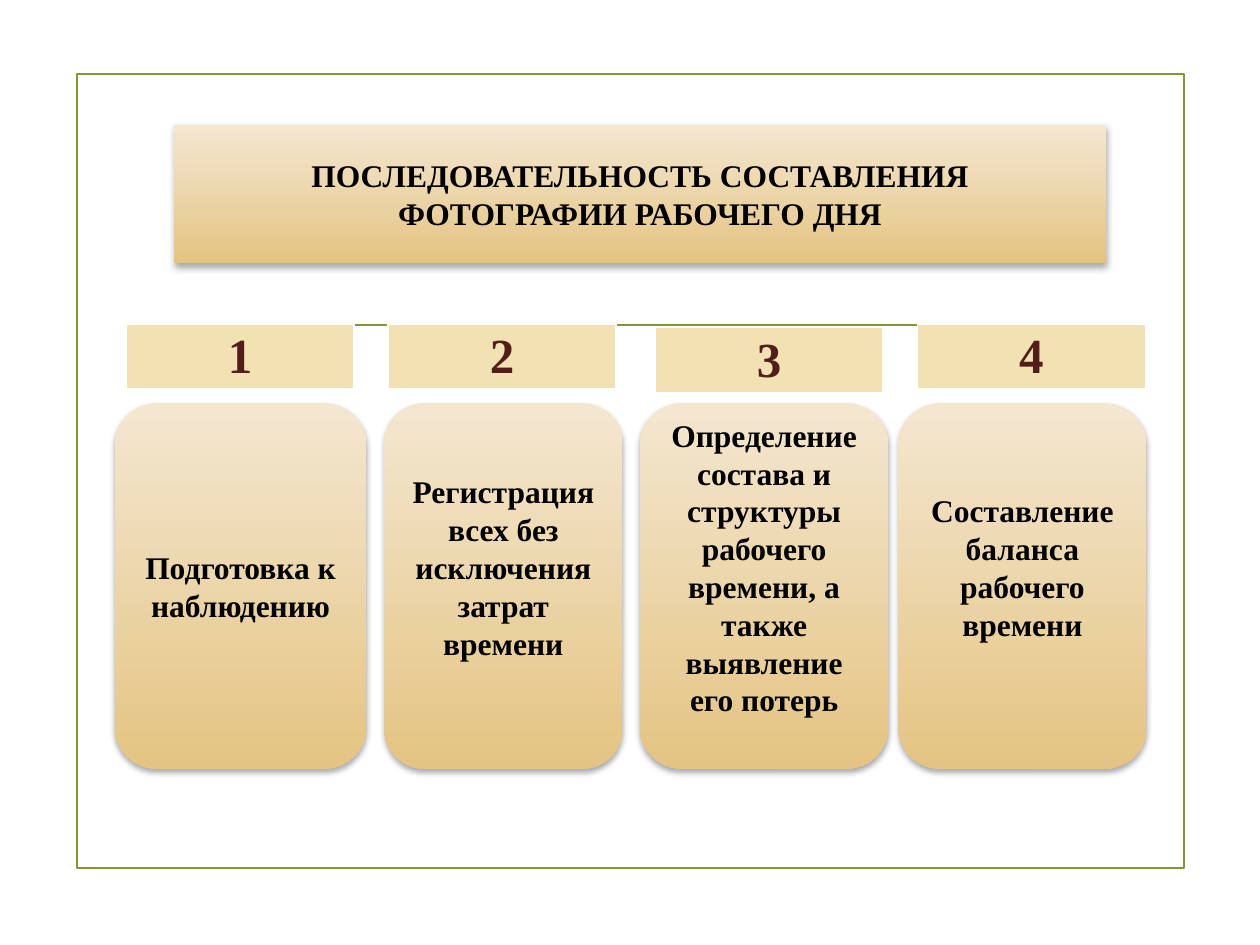
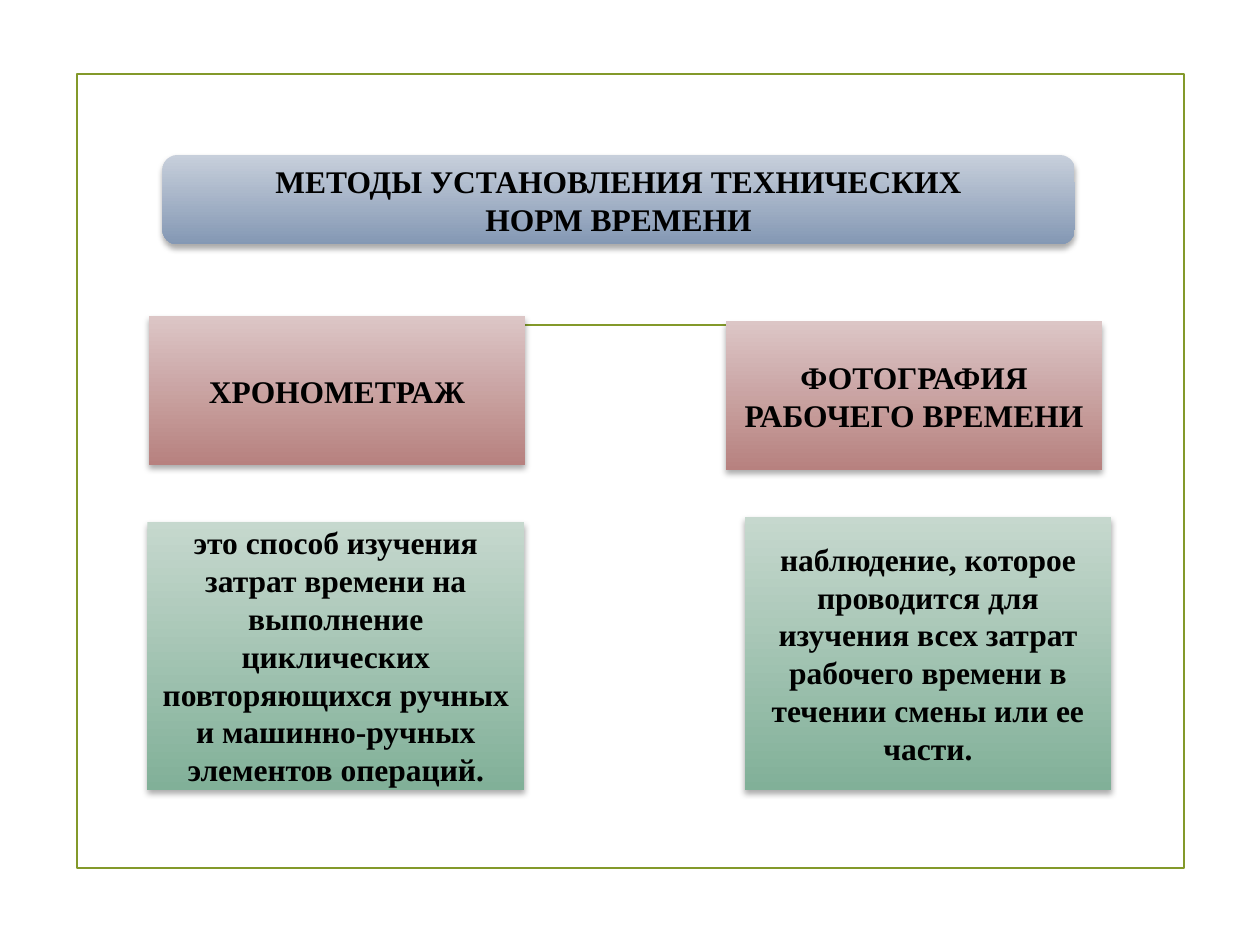
from dataclasses import dataclass
from lxml import etree
from pptx import Presentation
from pptx.dml.color import RGBColor as Rgb
from pptx.enum.shapes import MSO_CONNECTOR as Link, MSO_SHAPE as Kind
from pptx.enum.text import MSO_ANCHOR as Anchor, PP_ALIGN as Align
from pptx.oxml.ns import qn
from pptx.util import Inches, Pt


@dataclass(frozen=True)
class Theme:
    font: str = "Times New Roman"
    body: int = 18
    number: int = 28
    ink: str = "000000"
    maroon: str = "511E19"
    olive: str = "83992A"
    cream: str = "F2E1B3"
    white: str = "FFFFFF"
    gold: tuple = ("F4E7D1", "E4C482")
    blue: tuple = ("C7CFDB", "8498B4")
    rose: tuple = ("DCC6C6", "B7817F")
    green: tuple = ("C6D8CE", "81B098")


def node(parent, tag, **attrs):
    return etree.SubElement(parent, qn(tag), {k: str(v) for k, v in attrs.items()})


class Deck:
    def __init__(self, theme):
        self.theme = theme
        self.prs = Presentation()
        self.prs.slide_width, self.prs.slide_height = Inches(10), Inches(7.5)
        self.slide = None

    def page(self):
        """Start a slide with the shared frame and rule."""
        self.slide = self.prs.slides.add_slide(self.prs.slide_layouts[6])
        frame = self.slide.shapes.add_shape(
            Kind.RECTANGLE, Inches(0.61), Inches(0.59), Inches(8.79), Inches(6.3))
        frame.shadow.inherit = False
        frame.fill.background()
        rule = self.slide.shapes.add_connector(
            Link.STRAIGHT, Inches(1.4), Inches(2.58), Inches(8.61), Inches(2.58))
        for item in (frame, rule):
            item.line.color.rgb = Rgb.from_string(self.theme.olive)
            item.line.width = Pt(1.25)
        node(rule._element.spPr, "a:effectLst")

    def label(self, frame, text, size, color):
        frame.text = text
        for para in frame.paragraphs:
            para.alignment = Align.CENTER
            for run in para.runs:
                font = run.font
                font.name, font.size, font.bold = self.theme.font, Pt(size), True
                font.color.rgb = Rgb.from_string(color)

    def panel(self, text, box, tones, kind=Kind.RECTANGLE, lift=0):
        """Add a shaded box; lift is extra room kept free below the text."""
        shape = self.slide.shapes.add_shape(kind, *map(Inches, box))
        shape.line.fill.background()
        shape.fill.gradient()
        shape.fill.gradient_angle = 270
        for stop, tone in zip(shape.fill.gradient_stops, tones):
            stop.color.rgb = Rgb.from_string(tone)
        self.shade(shape)
        frame = shape.text_frame
        frame.word_wrap = True
        frame.vertical_anchor = Anchor.MIDDLE
        frame.margin_bottom = Inches(0.05 + lift)
        self.label(frame, text, self.theme.body, self.theme.ink)

    def shade(self, shape):
        shape.shadow.inherit = False
        effects = shape._element.spPr.find(qn("a:effectLst"))
        outer = node(effects, "a:outerShdw", blurRad=Pt(3.5), dist=Pt(2.2),
                     dir=90 * 60000, algn="t", rotWithShape=0)
        node(node(outer, "a:srgbClr", val="000000"), "a:alpha", val=32000)

    def badge(self, text, left, top):
        """Add a one-cell table holding a step number."""
        table = self.slide.shapes.add_table(
            1, 1, Inches(left), Inches(top), Inches(1.81), Inches(0.47)).table
        table.first_row = table.horz_banding = False
        cell = table.cell(0, 0)
        self.label(cell.text_frame, text, self.theme.number, self.theme.maroon)
        props = cell._tc.get_or_add_tcPr()
        for side, width in zip("LRTB", (1, 1, 1, 3)):
            edge = node(props, f"a:ln{side}", w=Pt(width))
            node(node(edge, "a:solidFill"), "a:srgbClr", val=self.theme.white)
        cell.fill.solid()
        cell.fill.fore_color.rgb = Rgb.from_string(self.theme.cream)


def steps(deck):
    theme = deck.theme
    deck.page()
    deck.panel("ПОСЛЕДОВАТЕЛЬНОСТЬ СОСТАВЛЕНИЯ\nФОТОГРАФИИ РАБОЧЕГО ДНЯ",
               (1.38, 0.99, 7.4, 1.1), theme.gold)
    # Card text, left, width and lift, then badge left and top
    cards = (
        ("Подготовка к наблюдению", 0.91, 2, 0, 1, 2.57),
        ("Регистрация всех без исключения затрат времени",
         3.05, 1.89, 0.3, 3.08, 2.57),
        ("Определение состава и структуры рабочего времени, "
         "а также выявление его потерь", 5.08, 1.97, 0.3, 5.2, 2.6),
        ("Составление баланса рабочего времени",
         7.13, 1.97, 0.3, 7.28, 2.57),
    )
    for step, (text, left, width, lift, tab, top) in enumerate(cards, 1):
        deck.panel(text, (left, 3.2, width, 2.9), theme.gold,
                   Kind.ROUNDED_RECTANGLE, lift)
        deck.badge(str(step), tab, top)


def methods(deck):
    theme = deck.theme
    deck.page()
    deck.panel("МЕТОДЫ УСТАНОВЛЕНИЯ ТЕХНИЧЕСКИХ\nНОРМ ВРЕМЕНИ",
               (1.29, 1.23, 7.24, 0.71), theme.blue, Kind.ROUNDED_RECTANGLE)
    deck.panel("ХРОНОМЕТРАЖ", (1.18, 2.51, 2.99, 1.18), theme.rose)
    deck.panel("ФОТОГРАФИЯ РАБОЧЕГО ВРЕМЕНИ", (5.76, 2.55, 2.99, 1.18), theme.rose)
    deck.panel("это способ изучения затрат времени на выполнение циклических "
               "повторяющихся ручных и машинно-ручных элементов операций.",
               (1.17, 4.14, 2.99, 2.13), theme.green)
    deck.panel("наблюдение, которое проводится для изучения всех затрат "
               "рабочего времени в течении смены или ее части.",
               (5.91, 4.1, 2.91, 2.17), theme.green)


def main():
    deck = Deck(Theme())
    steps(deck)
    methods(deck)
    deck.prs.save("out.pptx")


if __name__ == "__main__":
    main()
